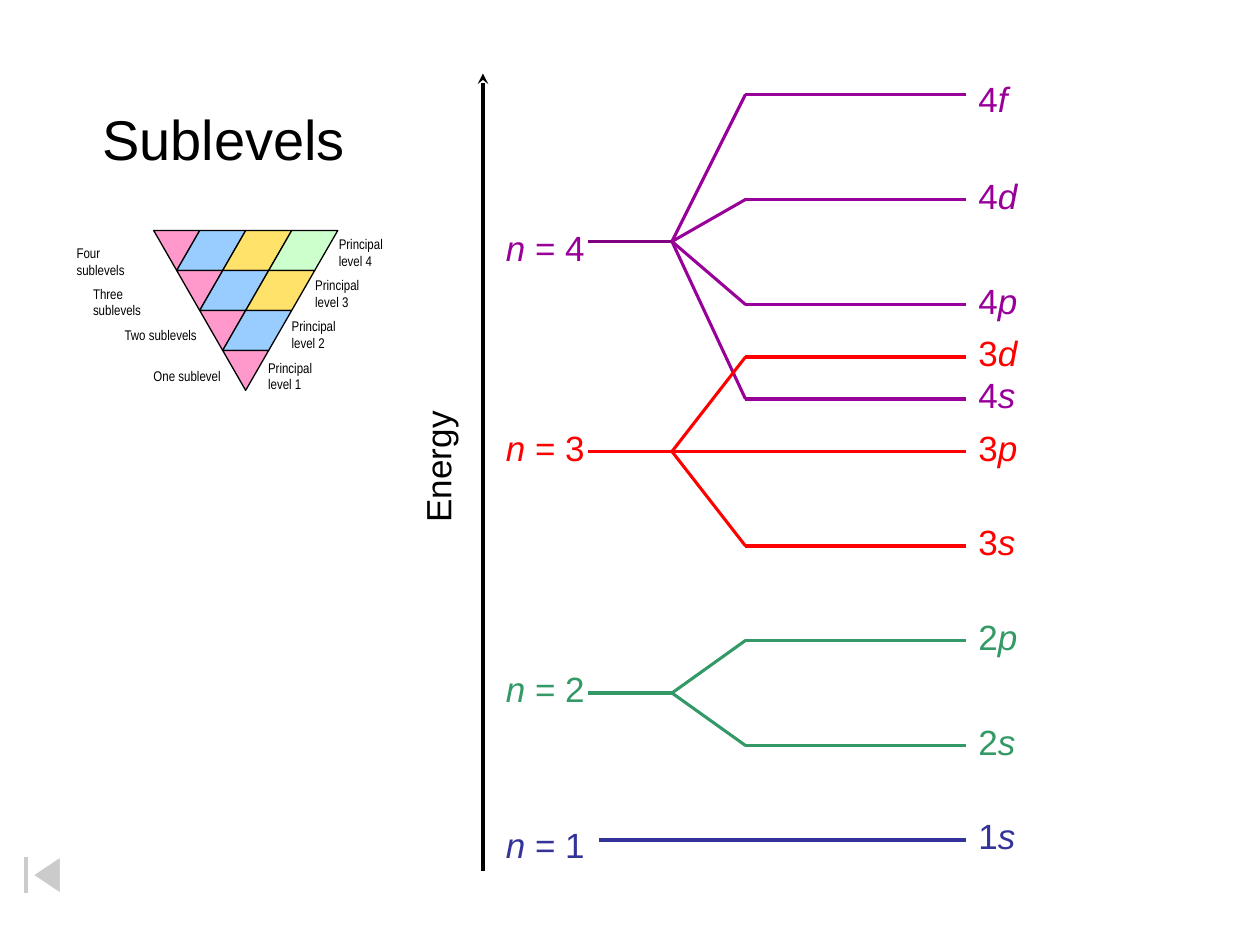
import pptx
import pptx.util
import pptx.dml.color
import pptx.enum.shapes
import pptx.enum.text
import pptx.oxml
import pptx.oxml.ns
import lxml.etree

theme = {
    "black": "000000", "white": "FFFFFF",
    "levels": {4: "990099", 3: "FF0000", 2: "339966", 1: "333399"},
    "stem 4": "800080",
    "cells": ["FF99CC", "99CCFF", "FFE269", "CCFFCC"],
    "title": {"name": "Arial", "size": pptx.util.Pt(32)},
    "label": {"name": "Arial", "size": pptx.util.Pt(20)},
    "small": {"name": "Arial Narrow", "size": pptx.util.Pt(8)},
    "axis width": 2, "level width": 1.75, "cell width": 0.75,
}
inch = pptx.util.Inches
color = pptx.dml.color.RGBColor.from_string
qn = pptx.oxml.ns.qn
UNIT = 1 / 12  # the diagram sits on a grid of twelfths of an inch

deck = pptx.Presentation()
deck.slide_width, deck.slide_height = inch(10), inch(7.5)
page = deck.slides.add_slide(deck.slide_layouts[5])


def add_line(x1, y1, x2, y2, line_color, width):
    """Draw a straight line between two points of the grid."""
    line = page.shapes.add_connector(
        pptx.enum.shapes.MSO_CONNECTOR.STRAIGHT,
        *[inch(value * UNIT) for value in (x1, y1, x2, y2)])
    line.line.color.rgb = color(line_color)
    line.line.width = pptx.util.Pt(width)
    lxml.etree.SubElement(line._element.spPr, qn("a:effectLst"))
    return line


def add_text(place, lines, style, text_color="000000", wrap=False, box=None):
    """Write lines of text; words starting with an underscore are italic."""
    left, top, width, height = [inch(value) for value in place]
    if box is None:
        box = page.shapes.add_textbox(left, top, width, height)
    box.left, box.top, box.width, box.height = left, top, width, height
    frame_format = {"word_wrap": wrap,
                    "auto_size": pptx.enum.text.MSO_AUTO_SIZE.NONE,
                    "vertical_anchor": pptx.enum.text.MSO_ANCHOR.TOP}
    for name, value in frame_format.items():
        setattr(box.text_frame, name, value)
    for index, spans in enumerate(lines):
        para = (box.text_frame.add_paragraph() if index
                else box.text_frame.paragraphs[0])
        para.alignment = pptx.enum.text.PP_ALIGN.LEFT
        for text in spans:
            span = para.add_run()
            span.text = text.lstrip("_")
            for name, value in theme[style].items():
                setattr(span.font, name, value)
            span.font.italic = text.startswith("_")
            span.font.color.rgb = color(text_color)
    return box


# Title
add_text((0.71, 0.78, 2.13, 0.63), [["Sublevels"]], "title",
         box=page.shapes.title)

# Energy axis
axis = add_line(46, 83, 46, 7, theme["black"], theme["axis width"])
lxml.etree.SubElement(axis.line._get_or_add_ln(), qn("a:tailEnd"), type="stealth")
add_text((2.93, 3.49, 1.08, 0.43), [["Energy"]], "label").rotation = 270

# Energy levels: level -> (row, row of its label, rows of its sublevels)
STEM, FORK, BRANCH, END = 56, 64, 71, 92
levels = {
    4: (23, 21, {"f": 9, "d": 19, "p": 29, "s": 38}),
    3: (43, 40, {"d": 34, "p": 43, "s": 52}),
    2: (66, 63, {"p": 61, "s": 71}),
    1: (80, 77.8, {"s": 80}),
}
for level, (row, label_row, sublevels) in levels.items():
    level_color = theme["levels"][level]
    width = theme["level width"]
    straight = row in sublevels.values()
    add_line(STEM + (level == 1), row, END if straight else FORK, row,
             theme.get(f"stem {level}", level_color), width)
    for letter, sub_row in sublevels.items():
        if sub_row != row:
            add_line(FORK, row, BRANCH, sub_row, level_color, width)
            add_line(BRANCH, sub_row, END, sub_row, level_color, width)
        lift = 2.2 if letter == "f" else 3
        add_text((END * UNIT, (sub_row - lift) * UNIT, 0.5, 0.43),
                 [[str(level), "_" + letter]], "label", level_color)
    add_text((47 * UNIT, label_row * UNIT, 0.82, 0.43),
             [["_n", f" = {level}"]], "label", level_color)

# Button back to the start
button = page.shapes.add_shape(
    pptx.enum.shapes.MSO_SHAPE.ACTION_BUTTON_BEGINNING,
    0, inch(6.75), inch(0.67), inch(0.39))
button.shadow.inherit = False
button.fill.solid()
button.fill.fore_color.rgb = color(theme["white"])
lxml.etree.SubElement(button._element.spPr.find(".//" + qn("a:srgbClr")),
                      qn("a:alpha"), val="50000")
button.line.color.rgb = color(theme["white"])
button.line.width = pptx.util.Pt(theme["cell width"])

# Inverted pyramid: each row starts half a cell further in and loses one cell
LEFT, TOP, CELL, ROW = 1.22, 1.83, 0.365, 0.317
for row in range(4):
    for column in range(4 - row):
        x = LEFT + row * CELL / 2 + column * CELL
        y = TOP + row * ROW
        corners = [(x, y), (x + CELL, y), (x + CELL / 2, y + ROW)]
        if column:
            corners.append((x - CELL / 2, y + ROW))
        points = [(inch(a), inch(b)) for a, b in corners]
        builder = page.shapes.build_freeform(*points[0])
        builder.add_line_segments(points[1:], close=True)
        cell = builder.convert_to_shape()
        cell.shadow.inherit = False
        cell.fill.solid()
        cell.fill.fore_color.rgb = color(theme["cells"][column])
        cell.line.color.rgb = color(theme["black"])
        cell.line.width = pptx.util.Pt(theme["cell width"])

# Pyramid labels
counts = [("Four sublevels", 0.51), ("Three sublevels", 0.64),
          ("Two sublevels", 0.89), ("One sublevel", 1.12)]
for row, (text, left) in enumerate(counts):
    add_text((left, 1.89 + row * 0.325, 0.7, 0.23), [[text]], "small",
             wrap=row < 2)
    add_text((2.59 - row * 0.187, 1.82 + row * 0.327, 0.55, 0.37),
             [["Principal"], [f"level {4 - row}"]], "small")

deck.save("out.pptx")
